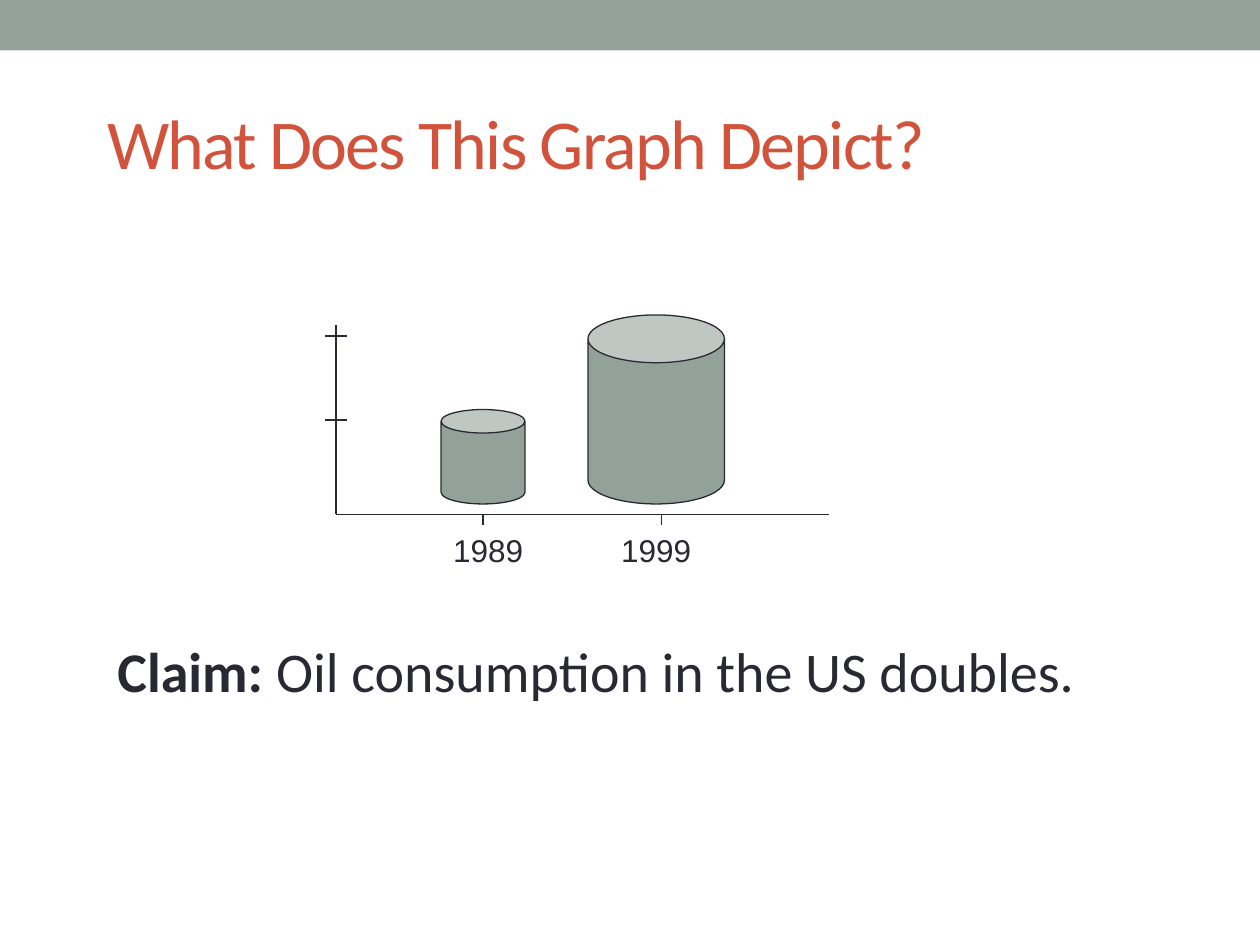
import lxml.etree
import pptx
import pptx.util
import pptx.dml.color
import pptx.enum.shapes
import pptx.enum.text
import pptx.oxml.ns

COLUMNS = 120
SAGE, INK, RUST = "93A299", "292934", "D2533C"

heading = "What Does This Graph Depict?"
claim = [("Claim: ", True), ("Oil consumption in the US doubles.", False)]
barrels = [
    {"year": "1989", "box": (42, 39, 8, 9), "lid": 0.28, "tick": 46, "label": 40},
    {"year": "1999", "box": (56, 30, 13, 18), "lid": 0.35, "tick": 63, "label": 56},
]
axis_left, axis_right, axis_top, axis_base = 32, 79, 31, 49
value_ticks = [32, 40]

deck = pptx.Presentation()
deck.slide_width = pptx.util.Inches(10)
deck.slide_height = pptx.util.Inches(7.5)
cell = deck.slide_width / COLUMNS
slide = deck.slides.add_slide(deck.slide_layouts[5])


def grid(*cells):
    return [round(n * cell) for n in cells]


def rgb(value):
    return pptx.dml.color.RGBColor.from_string(value)


def add_solid(kind, box, outlined):
    solid = slide.shapes.add_shape(kind, *grid(*box))
    solid.shadow.inherit = False
    solid.fill.solid()
    solid.fill.fore_color.rgb = rgb(SAGE)
    if outlined:
        solid.line.color.rgb = rgb(INK)
        solid.line.width = pptx.util.Pt(0.75)
    else:
        solid.line.fill.background()
    return solid


def add_rule(x1, y1, x2, y2):
    rule = slide.shapes.add_connector(
        pptx.enum.shapes.MSO_CONNECTOR.STRAIGHT, *grid(x1, y1, x2, y2))
    rule.line.color.rgb = rgb(INK)
    rule.line.width = pptx.util.Pt(0.75)
    lxml.etree.SubElement(rule._element.spPr, pptx.oxml.ns.qn("a:effectLst"))


def add_run(paragraph, words, size, font, color, bold=False):
    run = paragraph.add_run()
    run.text = words
    run.font.size = pptx.util.Pt(size)
    run.font.name = font
    run.font.bold = bold
    run.font.color.rgb = rgb(color)
    return run


def add_text(box, align):
    frame = slide.shapes.add_textbox(*grid(*box)).text_frame
    frame.word_wrap = True
    frame.paragraphs[0].alignment = align
    return frame.paragraphs[0]


LEFT, CENTER = pptx.enum.text.PP_ALIGN.LEFT, pptx.enum.text.PP_ALIGN.CENTER

add_solid(pptx.enum.shapes.MSO_SHAPE.RECTANGLE, (0, 0, COLUMNS, 4.8), False)

title = slide.shapes.title
title.left, title.top, title.width, title.height = grid(9, 7, 105, 13)
title.text_frame.vertical_anchor = pptx.enum.text.MSO_ANCHOR.MIDDLE
title_line = title.text_frame.paragraphs[0]
title_line.alignment = LEFT
title_run = add_run(title_line, heading, 40, "Calibri", RUST)
title_run._r.get_or_add_rPr().set("spc", "-100")

claim_line = add_text((10, 60, 100, 10), LEFT)
for words, bold in claim:
    add_run(claim_line, words, 32, "Calibri", INK, bold)

add_rule(axis_left, axis_top, axis_left, axis_base)
add_rule(axis_left, axis_base, axis_right, axis_base)
for y in value_ticks:
    add_rule(axis_left - 1, y, axis_left + 1, y)

for barrel in barrels:
    can = add_solid(pptx.enum.shapes.MSO_SHAPE.CAN, barrel["box"], True)
    can.adjustments[0] = barrel["lid"]
    add_rule(barrel["tick"], axis_base, barrel["tick"], axis_base + 1)
    year_line = add_text((barrel["label"], axis_base + 1, 13, 4.8), CENTER)
    add_run(year_line, barrel["year"], 18, "Arial", INK)

deck.save("out.pptx")
